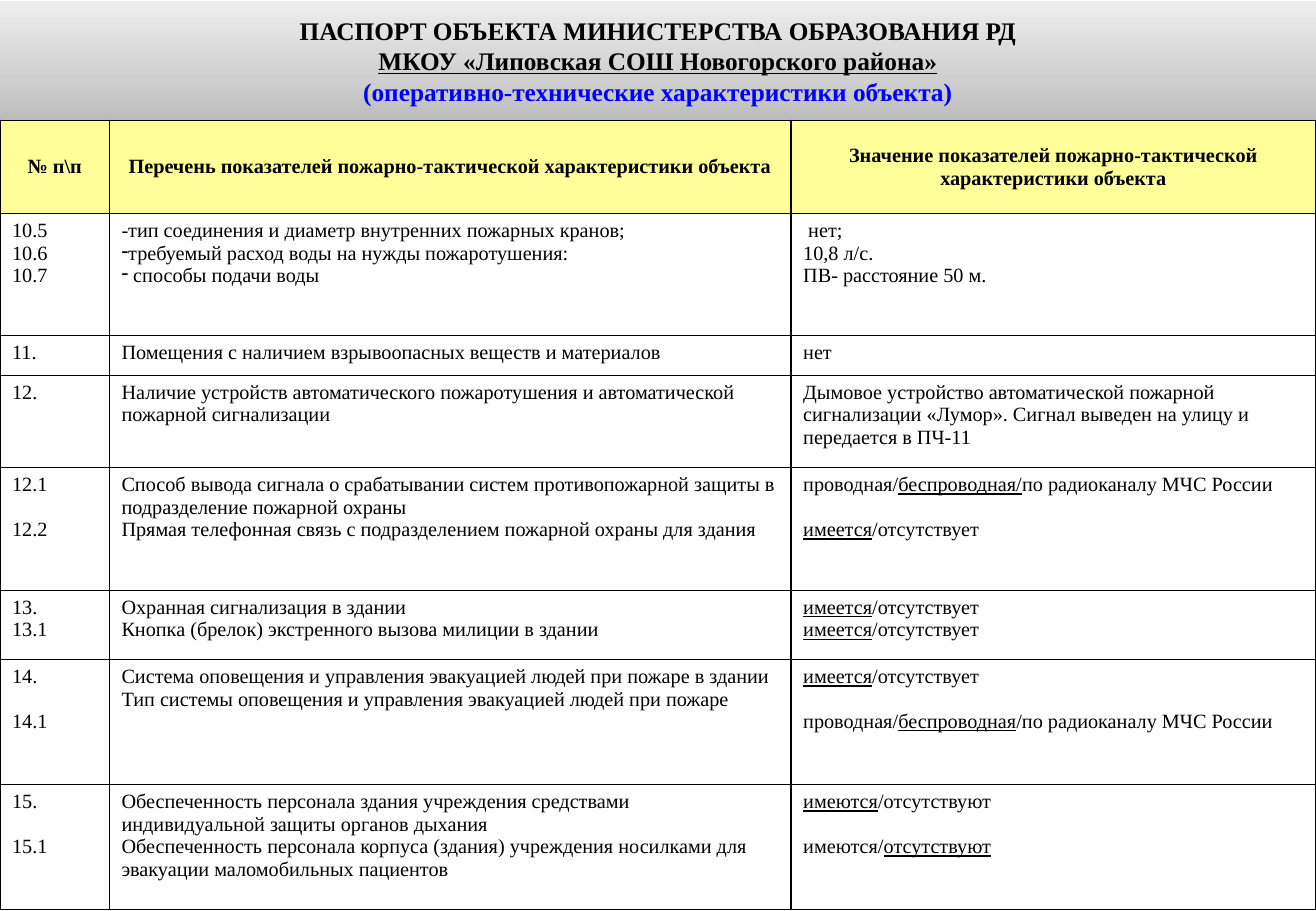
from copy import deepcopy

from lxml.etree import SubElement
from pptx import Presentation
from pptx.dml.color import RGBColor
from pptx.enum.text import MSO_ANCHOR, MSO_AUTO_SIZE, PP_ALIGN
from pptx.oxml.ns import qn
from pptx.util import Inches, Pt

FONT = "Times New Roman"
BLACK = RGBColor(0x00, 0x00, 0x00)
BLUE = RGBColor(0x00, 0x00, 0xFF)
WHITE = RGBColor(0xFF, 0xFF, 0xFF)
YELLOW = RGBColor(0xFF, 0xFF, 0x99)
BAND_STOPS = [
    (0, RGBColor(0xBC, 0xBC, 0xBC)),
    (0.35, RGBColor(0xD0, 0xD0, 0xD0)),
    (1, RGBColor(0xED, 0xED, 0xED)),
]
BLANK_LINE = 13.3  # points, height of one table line

COLUMN_WIDTHS = [0.9, 5.61, 4.32]
ROW_HEIGHTS = [0.77, 1, 0.33, 0.76, 1.01, 0.57, 1.03, 1.03]


def line(text, **fmt):
    """One paragraph; parts between underscores are underlined."""
    return text, fmt


def spaced(text):
    """A paragraph set one line lower than the one above."""
    return line(text, before=BLANK_LINE)


HEADERS = [
    "№ п\\п",
    "Перечень показателей пожарно-тактической характеристики объекта",
    "Значение показателей пожарно-тактической характеристики объекта",
]
PRESENT = line("_имеется_/отсутствует")
ROWS = [
    ([line("10.5"), line("10.6"), line("10.7")],
     [line("-тип соединения и диаметр внутренних пожарных кранов;"),
      line("требуемый расход воды на нужды пожаротушения:", bullet="-"),
      line(" способы подачи воды", bullet="-")],
     [line(" нет;"), line("10,8 л/с."), line("ПВ- расстояние 50 м.")]),
    ([line("11.")],
     [line("Помещения с наличием взрывоопасных веществ и материалов")],
     [line("нет")]),
    ([line("12.")],
     [line("Наличие устройств автоматического пожаротушения и автоматической "
           "пожарной сигнализации")],
     [line("Дымовое устройство автоматической пожарной сигнализации «Лумор». "
           "Сигнал выведен на улицу и передается в ПЧ-11")]),
    ([line("12.1"), spaced("12.2")],
     [line("Способ вывода сигнала о срабатывании систем противопожарной "
           "защиты в подразделение пожарной охраны"),
      line("Прямая телефонная связь с подразделением пожарной охраны для здания")],
     [line("проводная/_беспроводная/_по радиоканалу МЧС России"),
      spaced("_имеется_/отсутствует")]),
    ([line("13."), line("13.1")],
     [line("Охранная сигнализация в здании"),
      line("Кнопка (брелок) экстренного вызова милиции в здании")],
     [PRESENT, PRESENT]),
    ([line("14."), spaced("14.1")],
     [line("Система оповещения и управления эвакуацией людей при пожаре в здании"),
      line("Тип системы оповещения и управления эвакуацией людей при пожаре")],
     [PRESENT, spaced("проводная/_беспроводная_/по радиоканалу МЧС России")]),
    ([line("15."), spaced("15.1")],
     [line("Обеспеченность персонала здания учреждения средствами "
           "индивидуальной защиты органов дыхания"),
      line("Обеспеченность персонала корпуса (здания) учреждения носилками "
           "для эвакуации маломобильных пациентов")],
     [line("_имеются_/отсутствуют"), spaced("имеются/_отсутствуют_")]),
]


def write(p, text, size=12, color=BLACK, bold=False, align=PP_ALIGN.LEFT,
          before=0, bullet=None):
    p.alignment = align
    p.space_before = Pt(before)
    if bullet:
        pPr = p._p.get_or_add_pPr()
        pPr.set("marL", "0")
        pPr.set("indent", "0")
        SubElement(pPr, qn("a:buChar")).set("char", bullet)
    for i, part in enumerate(text.split("_")):
        if part:
            r = p.add_run()
            r.text = part
            r.font.name = FONT
            r.font.size = Pt(size)
            r.font.bold = bold
            r.font.underline = i % 2 == 1
            r.font.color.rgb = color


def fill_text(tf, lines, **common):
    for i, (text, fmt) in enumerate(lines):
        p = tf.add_paragraph() if i else tf.paragraphs[0]
        write(p, text, **{**common, **fmt})


def set_gradient(fill, stops, angle):
    fill.gradient()
    fill.gradient_angle = angle
    gs = fill.gradient_stops[0]._gs
    gs.addnext(deepcopy(gs))
    for stop, (position, color) in zip(fill.gradient_stops, stops):
        stop.position = position
        stop.color.rgb = color


def set_borders(cell, color, width):
    tcPr = cell._tc.get_or_add_tcPr()
    for side in ("lnL", "lnR", "lnT", "lnB"):
        ln = SubElement(tcPr, qn(f"a:{side}"), w=str(Pt(width)))
        solid = SubElement(ln, qn("a:solidFill"))
        SubElement(solid, qn("a:srgbClr"), val=str(color))


def format_cell(cell, lines, fill, anchor=MSO_ANCHOR.TOP, **fmt):
    set_borders(cell, BLACK, 1)
    cell.fill.solid()
    cell.fill.fore_color.rgb = fill
    cell.vertical_anchor = anchor
    fill_text(cell.text_frame, lines, **fmt)


def add_heading(s):
    title = s.shapes.title
    title.left, title.top = Inches(0), Inches(0.01)
    title.width, title.height = Inches(10.83), Inches(0.98)
    set_gradient(title.fill, BAND_STOPS, 90)
    tf = title.text_frame
    tf.word_wrap = True
    tf.auto_size = MSO_AUTO_SIZE.NONE
    tf.vertical_anchor = MSO_ANCHOR.MIDDLE
    fill_text(tf, [
        line("ПАСПОРТ ОБЪЕКТА МИНИСТЕРСТВА ОБРАЗОВАНИЯ РД"),
        line("_МКОУ «Липовская СОШ Новогорского района»_"),
        line("(оперативно-технические характеристики объекта)", color=BLUE),
    ], size=15, bold=True, align=PP_ALIGN.CENTER)


def add_passport_table(s):
    table = s.shapes.add_table(
        len(ROW_HEIGHTS), len(COLUMN_WIDTHS), Inches(0), Inches(0.99),
        Inches(sum(COLUMN_WIDTHS)), Inches(sum(ROW_HEIGHTS))).table
    for column, width in zip(table.columns, COLUMN_WIDTHS):
        column.width = Inches(width)
    for row, height in zip(table.rows, ROW_HEIGHTS):
        row.height = Inches(height)
    # Header row
    for cell, text in zip(table.rows[0].cells, HEADERS):
        format_cell(cell, [line(text)], YELLOW, MSO_ANCHOR.MIDDLE,
                    bold=True, align=PP_ALIGN.CENTER)
    # Indicators and their values
    for i, row in enumerate(ROWS, start=1):
        for cell, lines in zip(table.rows[i].cells, row):
            format_cell(cell, lines, WHITE)


def main():
    prs = Presentation()
    prs.slide_width, prs.slide_height = Inches(10.83), Inches(7.5)
    s = prs.slides.add_slide(prs.slide_layouts[5])
    add_heading(s)
    add_passport_table(s)
    prs.save("out.pptx")


if __name__ == "__main__":
    main()
